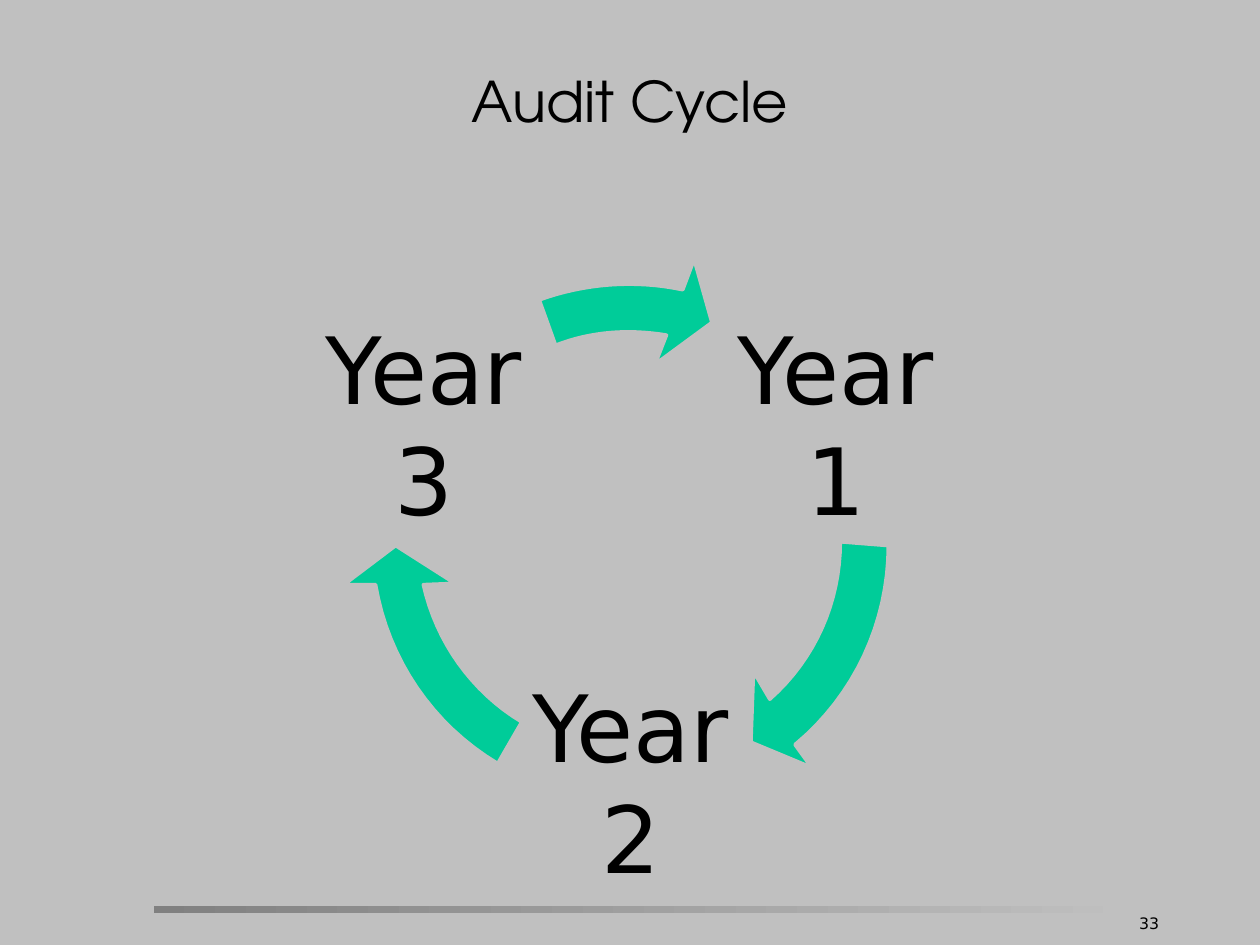
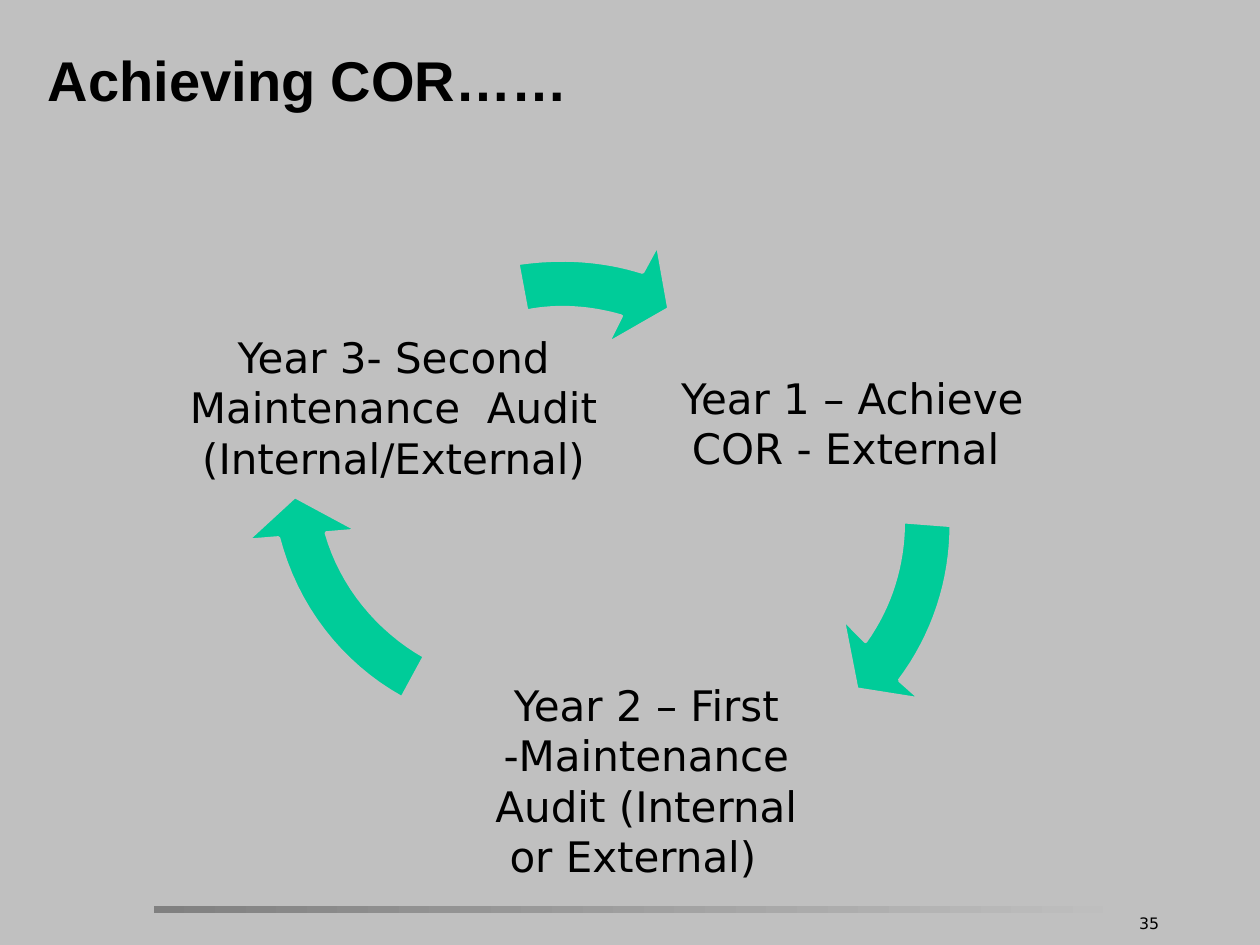
"""Build two slides that show the three-year audit cycle."""
from pptx import Presentation
from pptx.dml.color import RGBColor
from pptx.enum.shapes import MSO_SHAPE as SHAPE
from pptx.enum.text import MSO_ANCHOR as ANCHOR, MSO_AUTO_SIZE as AUTO, PP_ALIGN as ALIGN
from pptx.util import Pt

SILVER = RGBColor(0xC0, 0xC0, 0xC0)
GRAY = RGBColor(0x80, 0x80, 0x80)
GREEN = RGBColor(0x00, 0xCC, 0x99)
BLACK = RGBColor(0x00, 0x00, 0x00)
BODY_FONT = "DejaVu Sans"
CURVE_STEPS = 16

# Each arrow: outer curve (4 points), head (3 points), inner curve (4 points).
AUDIT_ARROWS = [
    [(507.6, 311.8), (507.6, 355.7), (488.2, 397.4), (454.3, 425.5),
     (463.7, 438.5), (429.1, 424.1), (430.6, 383.8),
     (439.9, 399.6), (465.8, 376.6), (480.2, 344.2), (480.2, 309.6)],
    [(284.4, 436.3), (247, 414), (221.8, 376.6), (214.6, 334.1),
     (196.6, 334.1), (226.1, 311.8), (259.9, 333.4),
     (241.9, 334.1), (249.1, 366.5), (269.3, 395.3), (298.1, 412.6)],
    [(308.2, 171.4), (334.1, 162), (362.9, 159.8), (390.2, 165.6),
     (396.7, 148.3), (406.8, 184.3), (374.4, 208.1),
     (380.9, 191.5), (359.3, 187.9), (337.7, 189.4), (317.5, 197.3)],
]
COR_ARROWS = [
    [(543.6, 300.2), (543.6, 331.9), (533.5, 362.9), (514.1, 388.8),
     (526.3, 399.6), (489.6, 393.8), (481.7, 353.5),
     (494.6, 366.5), (509, 346.3), (516.2, 322.6), (516.2, 298.1)],
    [(229.7, 398.9), (194.4, 379.4), (169.2, 346.3), (159.1, 307.4),
     (141.1, 308.9), (168.5, 283.7), (204.5, 303.1),
     (186.5, 304.6), (195.1, 334.8), (216, 360), (242.6, 375.1)],
    [(295.9, 150.5), (320.4, 146.9), (344.2, 148.3), (367.2, 155.5),
     (375.8, 139.7), (382.3, 176.4), (347, 196.6),
     (355, 180.7), (337.7, 175.7), (319, 174.2), (301, 177.8)],
]
AUDIT_LABELS = [
    ("Year 1", (407.5, 172.1, 140.4, 139)),
    ("Year 2", (290.2, 376.6, 140.4, 139)),
    ("Year 3", (172.1, 172.1, 140.4, 139)),
]
COR_LABELS = [
    ("Year 1 – Achieve COR - External ", (383, 210.2, 208.1, 62.6)),
    ("Year 2 – First -Maintenance Audit (Internal or External)  ",
     (274.3, 385.2, 190.1, 121)),
    ("Year 3- Second Maintenance  Audit (Internal/External)",
     (102.2, 186.5, 245.5, 92.2)),
]


def place(sp, box):
    """Move and size a shape from a box in points."""
    sp.left, sp.top, sp.width, sp.height = map(Pt, box)


def write(sp, text, size, font, align, inset, anchor=ANCHOR.MIDDLE, bold=False, wrap=True):
    """Fill a shape with one formatted paragraph."""
    tf = sp.text_frame
    tf.word_wrap = wrap
    tf.auto_size = AUTO.NONE
    tf.vertical_anchor = anchor
    tf.margin_left = tf.margin_right = tf.margin_top = tf.margin_bottom = Pt(inset)
    p = tf.paragraphs[0]
    p.text = text
    p.alignment = align
    p.font.name, p.font.size, p.font.bold = font, Pt(size), bold
    p.font.color.rgb = BLACK


def add_band(s):
    """Draw the fading band above the footer."""
    sp = s.shapes.add_shape(SHAPE.RECTANGLE, Pt(87.8), Pt(517.7), Pt(560.2), Pt(4.3))
    sp.shadow.inherit = False
    sp.line.fill.background()
    sp.fill.gradient()
    sp.fill.gradient_angle = 0
    for stop, color in zip(sp.fill.gradient_stops, (GRAY, SILVER)):
        stop.color.rgb = color


def add_text(s, text, box, **style):
    """Add a text box in the body font."""
    sp = s.shapes.add_textbox(*map(Pt, box))
    write(sp, text, font=BODY_FONT, **style)


def bezier(points):
    """Return points along a cubic curve."""
    curve = []
    for i in range(CURVE_STEPS + 1):
        t = i / CURVE_STEPS
        weights = ((1 - t) ** 3, 3 * t * (1 - t) ** 2, 3 * t * t * (1 - t), t ** 3)
        curve.append(tuple(sum(w * v for w, v in zip(weights, axis))
                           for axis in zip(*points)))
    return curve


def add_arrow(s, points):
    """Draw one curved block arrow."""
    outline = bezier(points[:4]) + points[4:7] + bezier(points[7:])
    start, *rest = [(Pt(x), Pt(y)) for x, y in outline]
    builder = s.shapes.build_freeform(*start)
    builder.add_line_segments(rest, close=True)
    sp = builder.convert_to_shape()
    sp.shadow.inherit = False
    sp.fill.solid()
    sp.fill.fore_color.rgb = GREEN
    sp.line.color.rgb = SILVER
    sp.line.width = Pt(2)


def add_cycle(s, labels, arrows, size, inset):
    """Draw the labels and the arrows that follow them."""
    for (text, box), points in zip(labels, arrows):
        add_text(s, text, box, size=size, align=ALIGN.CENTER, inset=inset)
        add_arrow(s, points)


def add_slide(prs, title, box, font, align, bold, number):
    """Add a slide with its title, band and page number."""
    s = prs.slides.add_slide(prs.slide_layouts[5])
    add_band(s)
    place(s.shapes.title, box)
    write(s.shapes.title, title, 32, font, align, 3.6, bold=bold)
    add_text(s, number, (646.6, 518.4, 19.4, 18), size=9, align=ALIGN.RIGHT,
             inset=3.6, anchor=ANCHOR.TOP, wrap=False)
    return s


def main():
    """Build and save the presentation."""
    prs = Presentation()
    prs.slide_width, prs.slide_height = Pt(720), Pt(540)
    fill = prs.slide_master.background.fill
    fill.solid()
    fill.fore_color.rgb = SILVER

    s = add_slide(prs, "Audit Cycle", (36, 12.2, 648, 90), "TeX Gyre Adventor",
                  ALIGN.CENTER, False, "33")
    add_cycle(s, AUDIT_LABELS, AUDIT_ARROWS, 53, 5)

    s = add_slide(prs, "Achieving COR……", (23.8, 0, 671.8, 90), "Arial",
                  ALIGN.LEFT, True, "35")
    add_cycle(s, COR_LABELS, COR_ARROWS, 24, 2.2)
    prs.save("out.pptx")


if __name__ == "__main__":
    main()
